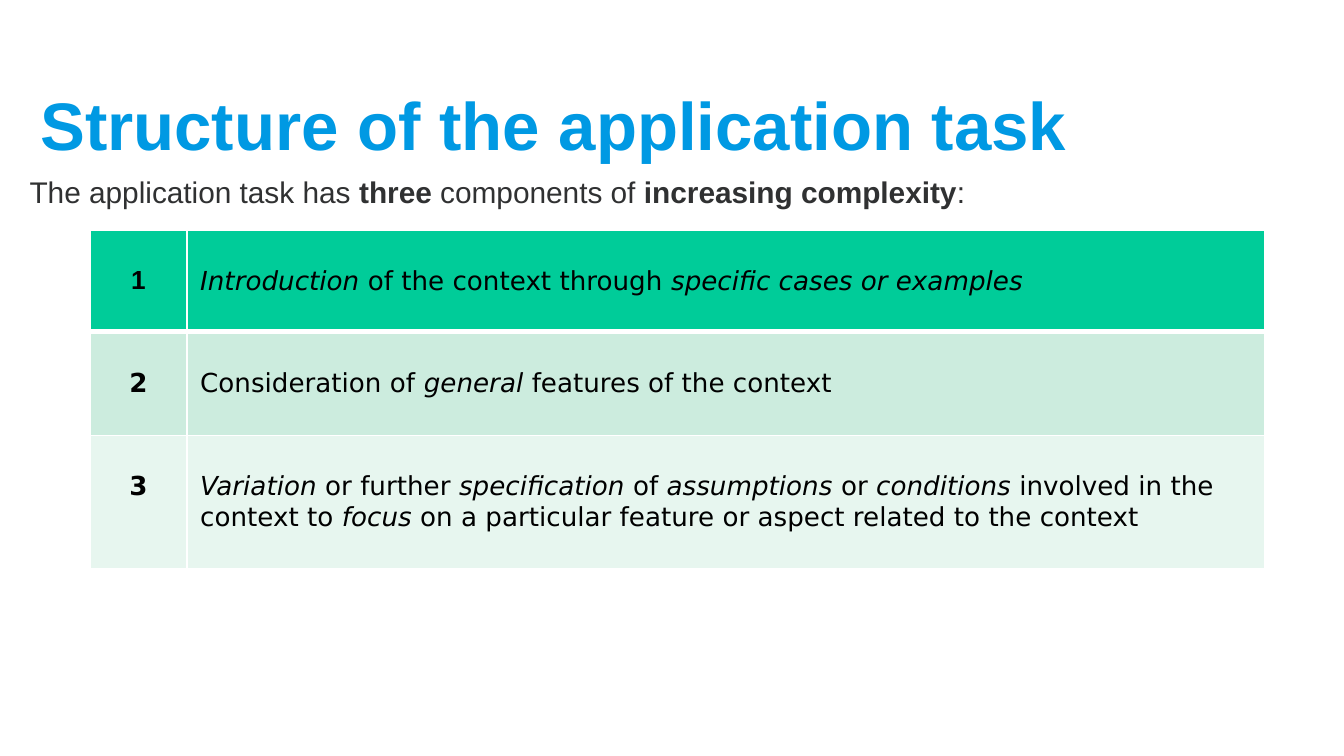
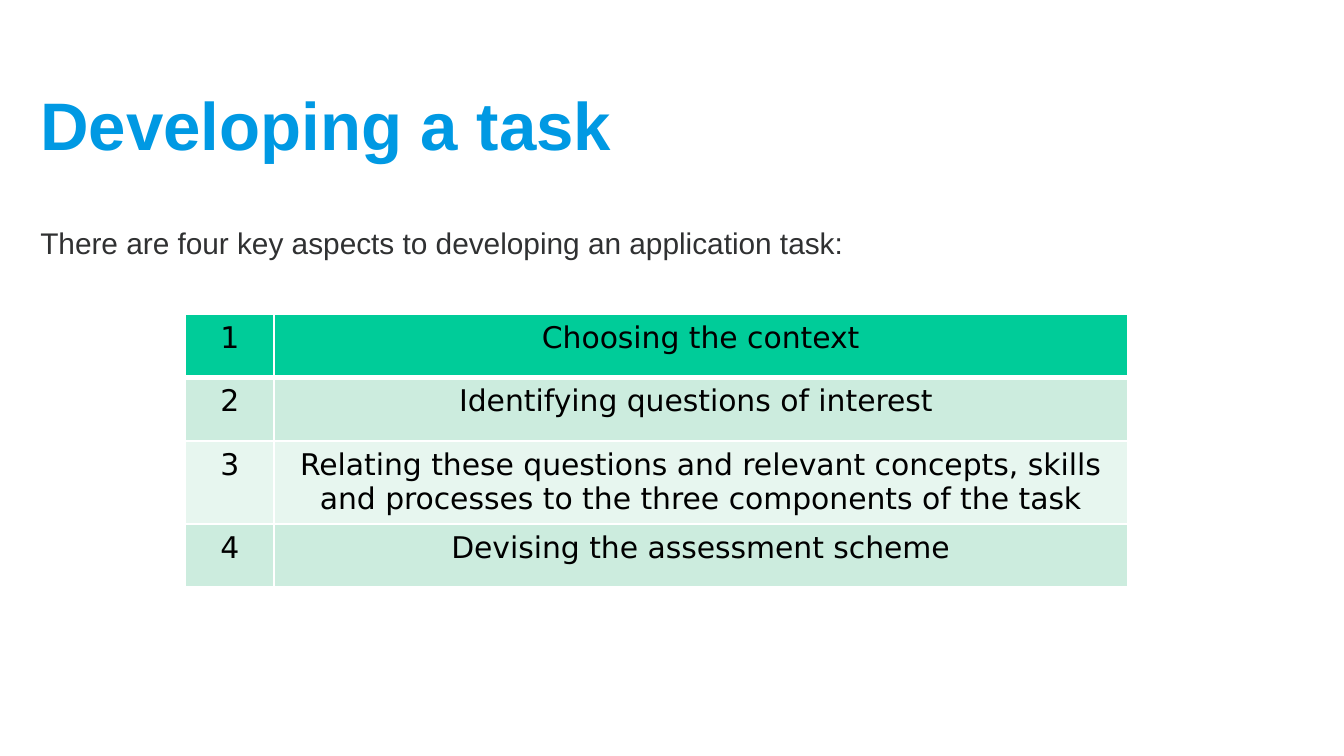
import pptx
import pptx.dml.color
import pptx.enum.text
import pptx.oxml
import pptx.oxml.ns
import pptx.util
from pptx.util import Inches

ALIGN = pptx.enum.text.PP_ALIGN
ANCHOR = pptx.enum.text.MSO_ANCHOR

# Shared style
PAGE_WIDTH = 10
PAGE_HEIGHT = PAGE_WIDTH * 9 / 16
BLUE, GREY, BLACK, WHITE = "0099E3", "303132", "000000", "FFFFFF"
HEADER_FILL, BAND_FILLS = "00CC99", ("E7F6EF", "CCECDE")
TITLE_FONT, TABLE_FONT = "Arial", "DejaVu Sans"
TITLE_PLACE = (0.2, 0.45, 9.53, 0.94)

# Content: asterisks enclose emphasised words (bold in the lead, italic in tables)
SLIDES = [
    {
        "title": "Structure of the application task",
        "lead": "The application task has *three* components of *increasing complexity*:",
        "lead_place": (0.12, 1.24, 9.53, 3.25),
        "rows": [
            "*Introduction* of the context through *specific cases or examples*",
            "Consideration of *general *features of the context",
            "*Variation *or further *specification* of* assumptions *or *conditions*"
            " involved in the context to *focus* on a particular feature or aspect"
            " related to the context",
        ],
        "corner": (0.67, 1.71),
        "widths": (0.72, 8.02),
        "heights": (0.76, 0.77, 0.99),
        "size": 14,
        "top_margin": 0.27,
        "number_bold": True,
        "number_fonts": (TITLE_FONT, TABLE_FONT, TABLE_FONT),
        "align": ALIGN.LEFT,
    },
    {
        "title": "Developing a task",
        "lead": "There are four key aspects to developing an application task:",
        "lead_place": (0.2, 1.62, 9.53, 3.25),
        "rows": [
            "Choosing the context",
            "Identifying questions of interest ",
            "Relating these questions and relevant concepts, skills and processes"
            " to the three components of the task",
            "Devising the assessment scheme",
        ],
        "corner": (1.38, 2.34),
        "widths": (0.66, 6.35),
        "heights": (0.47, 0.47, 0.62, 0.47),
        "size": 16,
        "top_margin": 0.05,
        "number_bold": False,
        "number_fonts": (TABLE_FONT,) * 4,
        "align": ALIGN.CENTER,
    },
]


def rgb(color):
    return pptx.dml.color.RGBColor.from_string(color)


def write(frame, text, *, size, color, font, bold=False, emphasis="italic",
          align=ALIGN.LEFT):
    """Write one paragraph; words between asterisks get the emphasis."""
    frame.word_wrap = True
    para = frame.paragraphs[0]
    para.alignment = align
    para.space_before = pptx.util.Pt(0)
    for index, piece in enumerate(text.split("*")):
        if not piece:
            continue
        span = para.add_run()
        span.text = piece
        span.font.size = pptx.util.Pt(size)
        span.font.name = font
        span.font.color.rgb = rgb(color)
        span.font.bold = bold
        span.font.italic = False
        if index % 2:
            setattr(span.font, emphasis, True)
    return para


def place(box, bounds, anchor):
    box.left, box.top, box.width, box.height = map(Inches, bounds)
    box.text_frame.auto_size = pptx.enum.text.MSO_AUTO_SIZE.NONE
    box.text_frame.vertical_anchor = anchor


def remove_bullet(para):
    properties = para._p.get_or_add_pPr()
    properties.set("marL", "0")
    properties.set("indent", "0")
    properties.append(pptx.oxml.parse_xml(
        f'<a:buNone {pptx.oxml.ns.nsdecls("a")}/>'))


def style_cell(cell, row, top_margin):
    """Give a cell its white borders, band fill and margins."""
    properties = cell._tc.get_or_add_tcPr()
    for side in ("lnL", "lnR", "lnT", "lnB"):
        heavy = (row == 0 and side == "lnB") or (row == 1 and side == "lnT")
        properties.append(pptx.oxml.parse_xml(
            f'<a:{side} {pptx.oxml.ns.nsdecls("a")} w="{pptx.util.Pt(3 if heavy else 1)}">'
            f'<a:solidFill><a:srgbClr val="{WHITE}"/></a:solidFill></a:{side}>'))
    cell.fill.solid()
    cell.fill.fore_color.rgb = rgb(BAND_FILLS[row % 2] if row else HEADER_FILL)
    cell.vertical_anchor = ANCHOR.TOP
    cell.margin_left = cell.margin_right = Inches(0.1)
    cell.margin_top, cell.margin_bottom = Inches(top_margin), Inches(0.05)


def add_numbered_table(page, content):
    rows, widths, heights = content["rows"], content["widths"], content["heights"]
    bounds = (*content["corner"], sum(widths), sum(heights))
    table = page.shapes.add_table(len(rows), 2, *map(Inches, bounds)).table
    table.first_row = table.horz_banding = False
    for column, width in zip(table.columns, widths):
        column.width = Inches(width)
    for index, (text, height) in enumerate(zip(rows, heights)):
        table.rows[index].height = Inches(height)
        number, description = table.cell(index, 0), table.cell(index, 1)
        for cell in (number, description):
            style_cell(cell, index, content["top_margin"])
        write(number.text_frame, str(index + 1), size=content["size"], color=BLACK,
              font=content["number_fonts"][index], bold=content["number_bold"],
              align=ALIGN.CENTER)
        write(description.text_frame, text, size=content["size"], color=BLACK,
              font=TABLE_FONT, align=content["align"])


def add_page(deck, content):
    page = deck.slides.add_slide(deck.slide_layouts[1])
    # Title
    title = page.shapes.title
    place(title, TITLE_PLACE, ANCHOR.MIDDLE)
    write(title.text_frame, content["title"], size=36, color=BLUE,
          font=TITLE_FONT, bold=True)
    # Lead sentence
    lead = page.placeholders[1]
    place(lead, content["lead_place"], ANCHOR.TOP)
    para = write(lead.text_frame, content["lead"], size=16, color=GREY,
                 font=TITLE_FONT, emphasis="bold")
    remove_bullet(para)
    # Numbered rows
    add_numbered_table(page, content)


def main():
    deck = pptx.Presentation()
    deck.slide_width, deck.slide_height = Inches(PAGE_WIDTH), Inches(PAGE_HEIGHT)
    for content in SLIDES:
        add_page(deck, content)
    deck.save("out.pptx")


if __name__ == "__main__":
    main()
